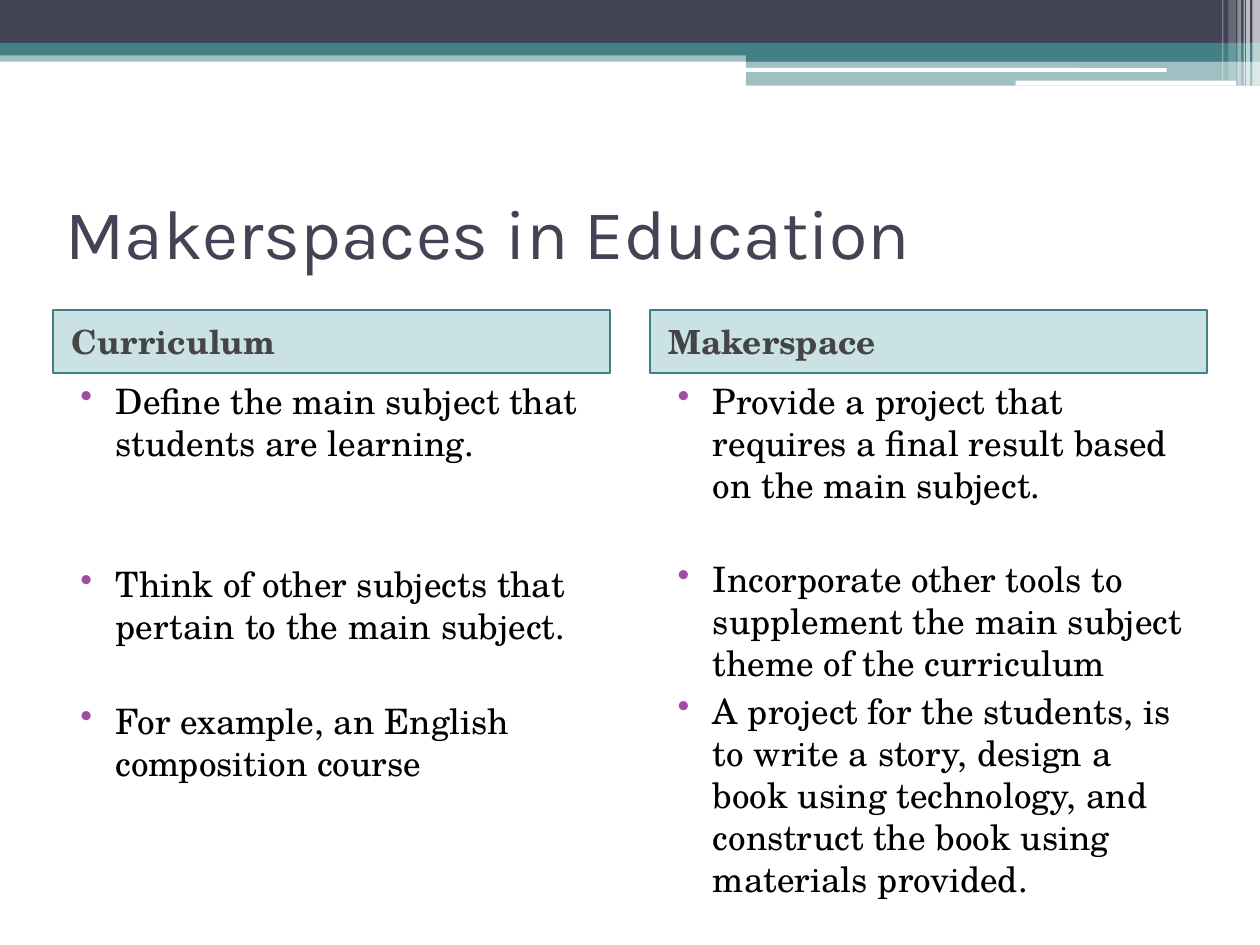
from dataclasses import dataclass

from lxml import etree
from pptx import Presentation
from pptx import util as u
from pptx.dml.color import RGBColor
from pptx.enum import shapes, text
from pptx.oxml import ns


@dataclass(frozen=True)
class Theme:
    """Colours, fonts and type sizes of the slide."""
    navy: str = "424456"
    teal: str = "438086"
    aqua: str = "328E97"
    white: str = "FFFFFF"
    grey: str = "454545"
    black: str = "000000"
    purple: str = "A04DA3"
    title_font: str = "Karla"
    body_font: str = "TeX Gyre Schola"
    title_size: int = 40
    heading_size: int = 19
    body_size: int = 20


THEME = Theme()
RECT = shapes.MSO_SHAPE.RECTANGLE
ROUND = shapes.MSO_SHAPE.ROUNDED_RECTANGLE

BANDS = [
    (0, 0.4, 10, 0.09, THEME.teal, 50, RECT),
    (0, 0, 10, 0.34, THEME.navy, 100, RECT),
    (0, 0.34, 10, 0.1, THEME.teal, 100, RECT),
    (5.92, 0.39, 4.08, 0.1, THEME.teal, 100, RECT),
    (5.92, 0.48, 4.08, 0.2, THEME.teal, 50, RECT),
    (5.91, 0.54, 3.35, 0.03, THEME.white, 100, ROUND),
    (8.06, 0.64, 1.75, 0.04, THEME.white, 100, ROUND),
]

STRIPES = [
    (9.94, 0.06, 0.68, 65),
    (9.89, 0.03, 0.68, 65),
    (9.87, 0.01, 0.68, 60),
    (9.82, 0.03, 0.68, 40),
    (9.75, 0.06, 0.64, 20),
    (9.7, 0.01, 0.64, 30),
]

COLUMNS = [
    (0.42, "Curriculum", [
        ("Define the main subject that students are learning.", 3),
        ("Think of other subjects that pertain to the main subject.", 57),
        ("For example, an English composition course", 30),
    ]),
    (5.16, "Makerspace", [
        ("Provide a project that requires a final result based on the main subject.", 3),
        ("Incorporate other tools to supplement the main subject theme of the curriculum", 30),
        ("A project for the students, is to write a story, design a book using "
         "technology, and construct the book using materials provided.", 3),
    ]),
]
COLUMN_WIDTH = 4.42


def style_para(para, font, size, colour, bold=False):
    """Left-align a paragraph and format its runs."""
    para.alignment = text.PP_ALIGN.LEFT
    for span in para.runs:
        span.font.name = font
        span.font.size = u.Pt(size)
        span.font.bold = bold
        span.font.color.rgb = RGBColor.from_string(colour)


def indent(para, left, first=0):
    """Set the left margin and first-line indent in inches."""
    properties = para._p.get_or_add_pPr()
    properties.set("marL", str(u.Inches(left)))
    properties.set("indent", str(u.Inches(first)))
    return properties


def add_bullet(para):
    """Give a paragraph a hanging purple bullet."""
    properties = indent(para, 0.4, -0.28)
    colour = etree.SubElement(properties, ns.qn("a:buClr"))
    etree.SubElement(colour, ns.qn("a:srgbClr"), val=THEME.purple)
    etree.SubElement(properties, ns.qn("a:buChar"), char="•")


def add_block(slide, left, top, width, height, colour, opacity=100, preset=RECT):
    """Add a borderless filled shape with the given opacity in percent."""
    block = slide.shapes.add_shape(
        preset, u.Inches(left), u.Inches(top), u.Inches(width), u.Inches(height))
    block.shadow.inherit = False
    block.fill.solid()
    block.fill.fore_color.rgb = RGBColor.from_string(colour)
    block.line.fill.background()
    if opacity < 100:
        tint = block._element.spPr.find(".//" + ns.qn("a:srgbClr"))
        etree.SubElement(tint, ns.qn("a:alpha"), val=str(opacity * 1000))
    return block


def add_banner(slide):
    """Draw the bands and the light stripes along the top edge."""
    for band in BANDS:
        add_block(slide, *band)
    for left, width, height, opacity in STRIPES:
        add_block(slide, left, 0, width, height, THEME.white, opacity)


def set_title(slide, wording):
    """Place and format the title placeholder."""
    title = slide.shapes.title
    title.left, title.top = u.Inches(0.42), u.Inches(1.25)
    title.width, title.height = u.Inches(9.17), u.Inches(1.17)
    frame = title.text_frame
    frame.text = wording
    frame.auto_size = text.MSO_AUTO_SIZE.NONE
    frame.vertical_anchor = text.MSO_ANCHOR.MIDDLE
    style_para(frame.paragraphs[0], THEME.title_font, THEME.title_size, THEME.navy)


def add_heading(slide, left, wording):
    """Add the tinted heading box of a column."""
    box = add_block(slide, left, 2.46, COLUMN_WIDTH, 0.5, THEME.aqua, 25)
    box.line.color.rgb = RGBColor.from_string(THEME.teal)
    box.line.width = u.Pt(1)
    frame = box.text_frame
    frame.text = wording
    frame.vertical_anchor = text.MSO_ANCHOR.MIDDLE
    para = frame.paragraphs[0]
    para.space_before = u.Pt(3)
    indent(para, 0.05)
    style_para(para, THEME.body_font, THEME.heading_size, THEME.grey, bold=True)


def add_bullets(slide, left, items):
    """Add the bulleted text of a column."""
    box = slide.shapes.add_textbox(
        u.Inches(left), u.Inches(2.96), u.Inches(COLUMN_WIDTH), u.Inches(4.25))
    frame = box.text_frame
    frame.word_wrap = True
    frame.text = "\n".join(wording for wording, _ in items)
    for para, (_, gap) in zip(frame.paragraphs, items):
        para.space_before = u.Pt(gap)
        add_bullet(para)
        style_para(para, THEME.body_font, THEME.body_size, THEME.black)


def main():
    """Build the slide and save the deck."""
    deck = Presentation()
    deck.slide_width, deck.slide_height = u.Inches(10), u.Inches(7.5)
    slide = deck.slides.add_slide(deck.slide_layouts.get_by_name("Title Only"))
    add_banner(slide)
    set_title(slide, "Makerspaces in Education")
    for left, heading, items in COLUMNS:
        add_heading(slide, left, heading)
        add_bullets(slide, left, items)
    deck.save("out.pptx")


if __name__ == "__main__":
    main()
